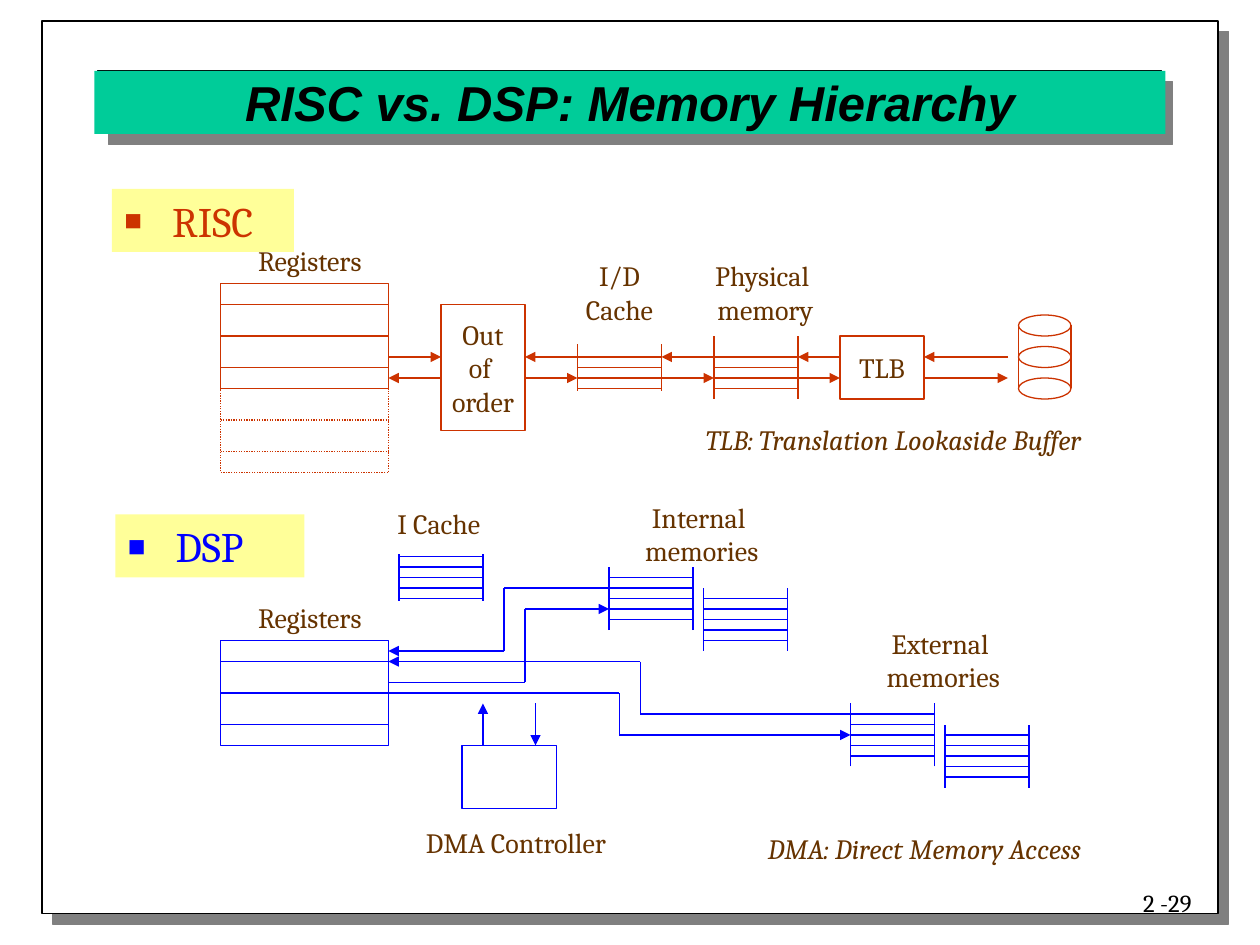
"""Builds a slide that compares the memory hierarchies of RISC and DSP processors."""
from itertools import pairwise

from lxml.etree import SubElement
from pptx import Presentation
from pptx.dml.color import RGBColor
from pptx.enum.dml import MSO_LINE_DASH_STYLE as DASH
from pptx.enum.shapes import MSO_CONNECTOR, MSO_SHAPE as SHAPE
from pptx.enum.text import MSO_ANCHOR as ANCHOR, MSO_AUTO_SIZE as FIT, PP_ALIGN as ALIGN
from pptx.oxml.ns import qn
from pptx.util import Inches, Pt

COLORS = {
    "white": "FFFFFF", "black": "000000", "gray": "DDDDDD", "shadow": "808080",
    "green": "00CC99", "yellow": "FFFF99", "risc": "CC3300", "dsp": "0000FF",
    "label": "663300",
}
COLS, ROWS = 120, 90

prs = Presentation()
prs.slide_width, prs.slide_height = Inches(10), Inches(7.5)
cell = prs.slide_width // COLS
s = prs.slides.add_slide(prs.slide_layouts[6])


def box(x, y, w, h, fill=None, line=None, text="", size=16, color="label",
        font="Cambria", align=ALIGN.CENTER, wrap=False, kind=SHAPE.RECTANGLE):
    area = [int(v * cell) for v in (x, y, w, h)]
    if fill:
        sp = s.shapes.add_shape(kind, *area)
        sp.shadow.inherit = False
        sp.fill.solid()
        sp.fill.fore_color.rgb = RGBColor.from_string(COLORS[fill])
        if line:
            sp.line.color.rgb = RGBColor.from_string(COLORS[line])
            sp.line.width = Pt(0.75)
        else:
            sp.line.fill.background()
    else:
        sp = s.shapes.add_textbox(*area)
        sp.text_frame.auto_size = FIT.SHAPE_TO_FIT_TEXT
    if text:
        tf = sp.text_frame
        tf.text = text
        tf.word_wrap = wrap
        tf.vertical_anchor = ANCHOR.MIDDLE
        for p in tf.paragraphs:
            p.alignment = align
            for r in p.runs:
                r.font.name, r.font.size = font, Pt(size)
                r.font.color.rgb = RGBColor.from_string(COLORS[color])
    return sp


def wire(color, *points, arrow=False, dash=None):
    for start, end in pairwise(points):
        c = s.shapes.add_connector(
            MSO_CONNECTOR.STRAIGHT, *[int(v * cell) for v in (*start, *end)])
        c.line.color.rgb = RGBColor.from_string(COLORS[color])
        c.line.width = Pt(0.75)
        if dash:
            c.line.dash_style = dash
        if arrow and end == points[-1]:
            SubElement(c.line._get_or_add_ln(), qn("a:tailEnd"), type="triangle")
        SubElement(c._element.spPr, qn("a:effectLst"))


frame = box(4, 2, COLS - 8, 85, "white", "black")
banner = box(9.33, 6.75, 101.33, 6, "gray", "black")
for sp in (frame, banner):
    effects = sp._element.spPr.find(qn("a:effectLst"))
    shadow = SubElement(effects, qn("a:outerShdw"), dist=str(Pt(8.5)), dir="2700000",
                        algn="ctr", rotWithShape="0")
    SubElement(shadow, qn("a:srgbClr"), val=COLORS["shadow"])

number = box(104, ROWS - 6, 10.67, 4, text="2 -29", size=14, color="black",
             align=ALIGN.RIGHT, wrap=True)
number.text_frame.vertical_anchor = ANCHOR.TOP
title = box(9, 6.75, 102, 6, "green", text="RISC vs. DSP: Memory Hierarchy", size=28,
            color="black", font="Arial", wrap=True)
title.text_frame.paragraphs[0].runs[0].font.bold = True
title.text_frame.paragraphs[0].runs[0].font.italic = True

for x, y, w, text, color in [(10.67, 18, 17.33, "RISC", "risc"), (11, 49, 18, "DSP", "dsp")]:
    sp = box(x, y, w, 6, "yellow", text=text, size=24, color=color,
             align=ALIGN.LEFT, wrap=True)
    sp.text_frame.vertical_anchor = ANCHOR.TOP
    pPr = sp.text_frame.paragraphs[0]._p.get_or_add_pPr()
    pPr.set("marL", str(Inches(0.38)))
    pPr.set("indent", str(-Inches(0.38)))
    SubElement(pPr, qn("a:buSzPct"), val="70000")
    SubElement(pPr, qn("a:buFont"), typeface="Arial")
    SubElement(pPr, qn("a:buChar"), char="■")

for color, top, height, rules, dash in [
    ("risc", 27, 10, (2, 5, 8), None),
    ("risc", 37, 8, (3, 6), DASH.ROUND_DOT),
    ("dsp", 61, 10, (2, 5, 8), None),
]:
    registers = box(21, top, 16, height, "white", color)
    if dash:
        registers.line.dash_style = dash
    for rule in rules:
        wire(color, (21, top + rule), (37, top + rule), dash=dash)
wire("risc", (21, 37), (37, 37))

box(42, 29, 8, 12, "white", "risc", "Out\vof \norder")
box(80, 32, 8, 6, "white", "risc", "TLB")
box(44, 71, 9, 6, "white", "dsp")

for color, x, rail_top, rail_end, first, count in [
    ("risc", 55, 32.8, 37.2, 34, 4),
    ("risc", 68, 32, 38, 34, 4),
    ("dsp", 38, 52.8, 57.2, 53, 5),
    ("dsp", 58, 54, 60, 55, 5),
    ("dsp", 67, 56, 62, 57, 5),
    ("dsp", 81, 67, 73, 68, 5),
    ("dsp", 90, 69, 75, 70, 5),
]:
    for rail in (x, x + 8):
        wire(color, (rail, rail_end), (rail, rail_top))
    for row in range(first, first + count):
        wire(color, (x, row), (x + 8, row))

for top in (30, 36, 33):
    box(97, top, 5, 2, "white", "risc", kind=SHAPE.OVAL)
for side in (97, 102):
    wire("risc", (side, 31), (side, 37))

wire("risc", (37, 34), (42, 34), arrow=True)
wire("risc", (42, 36), (37, 36), arrow=True)
for left, right in [(50, 55), (63, 68), (76, 80), (88, 96)]:
    wire("risc", (right, 34), (left, 34), arrow=True)
    wire("risc", (left, 36), (right, 36), arrow=True)

for route in [
    [(37, 66), (59, 66), (59, 70), (81, 70)],
    [(37, 65), (50, 65), (50, 58), (58, 58)],
    [(58, 56), (48, 56), (48, 62), (37, 62)],
    [(81, 68), (61, 68), (61, 63), (37, 63)],
    [(46, 71), (46, 67)],
    [(51, 67), (51, 71)],
]:
    wire("dsp", *route, arrow=True)

for x, y, w, h, text in [
    (22.5, 22.6, 14, 4.4, "Registers"),
    (54, 24, 10, 7.7, "I/D\vCache"),
    (66, 24, 13.2, 7.7, "Physical\n memory"),
    (22.5, 56.6, 14, 4.4, "Registers"),
    (35.9, 47.6, 11.8, 4.4, "I Cache"),
    (59, 47, 15.1, 7.7, "Internal\n memories"),
    (82, 59, 15.1, 7.7, "External\n memories"),
    (38, 78, 22.3, 4.4, "DMA Controller"),
]:
    box(x, y, w, h, text=text)

for x, y, w, text in [
    (62.3, 39.6, 45.6, "TLB: Translation Lookaside Buffer"),
    (69.5, 78.6, 37.1, "DMA: Direct Memory Access"),
]:
    sp = box(x, y, w, 4.4, text=text)
    sp.text_frame.paragraphs[0].runs[0].font.italic = True

prs.save("out.pptx")
